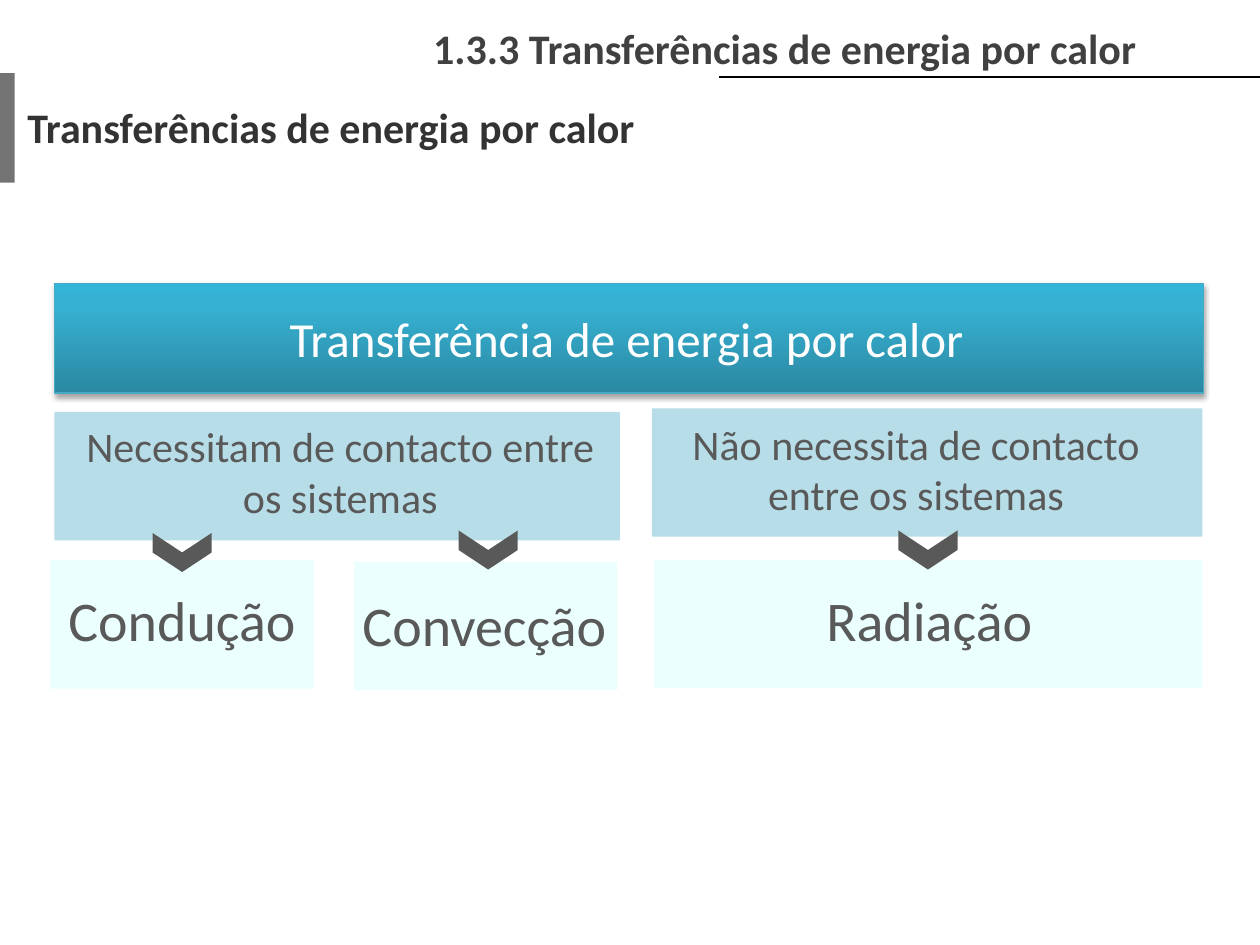
from pptx import Presentation
from pptx.dml.color import RGBColor
from pptx.enum.shapes import MSO_CONNECTOR as Conn, MSO_SHAPE as Kind
from pptx.enum.text import PP_ALIGN as Align
from pptx.oxml import parse_xml as xml
from pptx.oxml.ns import nsdecls, qn
from pptx.util import Pt

BLACK = RGBColor(0, 0, 0)
WHITE = RGBColor(255, 255, 255)
TITLE = RGBColor(0x40, 0x40, 0x40)
HEAD = RGBColor(0x33, 0x33, 0x33)
GRAY = RGBColor(0x59, 0x59, 0x59)
BLUE = RGBColor(0xB7, 0xDE, 0xE8)
PALE = RGBColor(0xEB, 0xFF, 0xFF)
EDGE = RGBColor(0x46, 0xAA, 0xC5)
STOPS = [(0, "2A88A2"), (80, "37B1D2"), (100, "34B4D6")]

BIG = {"size": Pt(32), "color": GRAY}
MID = {"size": Pt(24), "color": GRAY}
BOLD = {"size": Pt(24), "bold": True}

HEADS = [
    (["1.3.3 Transferências de energia por calor"], (240.5, 9.4, 419.8, 36), BOLD | {"color": TITLE}, False),
    (["Transferências de energia por calor"], (8.6, 54.7, 640.8, 40.3), BOLD | {"color": HEAD}, True),
]
BANNER = (["Transferência de energia por calor"], (158.4, 172.8, 436.3, 41), {"size": Pt(28), "color": WHITE})
CARDS = [
    (["Necessitam de contacto entre", "os sistemas"], BLUE, MID, (31, 235.4, 323.3), (23.8, 236.9, 341.3, 65.5)),
    (["Não necessita de contacto entre os sistemas"], BLUE, MID, (372.5, 233.3, 314.6), (381.6, 235.4, 283.7, 65.5)),
    (["Condução"], PALE, BIG, (28.8, 320.1, 150.5), (28.8, 331.2, 150.5, 46)),
    (["Convecção"], PALE, BIG, (202.3, 321, 150.5), (186.5, 334.1, 180.7, 46)),
    (["Radiação"], PALE, BIG, (373.9, 319.9, 313.2), (455.8, 331.2, 150.5, 46)),
]
DEEP = 73.4
ARROWS = [(92.9, 298.8), (267.8, 297.4), (519.1, 297.4)]

deck = Presentation()
deck.slide_width, deck.slide_height = Pt(720), Pt(540)
page = deck.slides.add_slide(deck.slide_layouts[6])


def block(kind, place, color):
    shape = page.shapes.add_shape(kind, *map(Pt, place))
    shape.shadow.inherit = False
    shape.fill.solid()
    shape.fill.fore_color.rgb = color
    shape.line.fill.background()
    return shape


def label(lines, place, style, wrap=True, align=Align.LEFT):
    frame = page.shapes.add_textbox(*map(Pt, place)).text_frame
    frame.word_wrap = wrap
    frame.text = "\n".join(lines)
    for para in frame.paragraphs:
        para.alignment = align
        font = para.runs[0].font
        font.name = "Calibri"
        for key, value in style.items():
            if key == "color":
                font.color.rgb = value
            else:
                setattr(font, key, value)


label(*HEADS[0])
rule = page.shapes.add_connector(Conn.STRAIGHT, Pt(720), Pt(44), Pt(411.1), Pt(44))
rule.line.color.rgb = BLACK
rule.line.width = Pt(0.75)
rule._element.spPr.append(xml(f"<a:effectLst {nsdecls('a')}/>"))

tab = block(Kind.RECTANGLE, (-0.7, 41.8, 9.1, 62.6), BLACK)
tint = tab._element.spPr.find(".//" + qn("a:srgbClr"))
tint.append(xml(f'<a:alpha {nsdecls("a")} val="55000"/>'))
label(*HEADS[1])

bar = block(Kind.RECTANGLE, (31, 162, 656.6, 62.6), EDGE)
bar.line.color.rgb = EDGE
bar.line.width = Pt(0.75)
props = bar._element.spPr
stops = "".join(f'<a:gs pos="{pos * 1000}"><a:srgbClr val="{tone}"/></a:gs>' for pos, tone in STOPS)
props.replace(props.find(qn("a:solidFill")), xml(
    f'<a:gradFill {nsdecls("a")} rotWithShape="1"><a:gsLst>{stops}</a:gsLst>'
    '<a:lin ang="16200000" scaled="0"/></a:gradFill>'))
props.find(qn("a:effectLst")).append(xml(
    f'<a:outerShdw {nsdecls("a")} blurRad="{Pt(3.1)}" dist="{Pt(1.8)}" dir="5400000" rotWithShape="0">'
    '<a:srgbClr val="000000"><a:alpha val="35000"/></a:srgbClr></a:outerShdw>'))
label(*BANNER)

for lines, color, style, (left, top, width), place in CARDS:
    block(Kind.RECTANGLE, (left, top, width, DEEP), color)
    label(lines, place, style, align=Align.CENTER)

for left, top in ARROWS:
    block(Kind.CHEVRON, (left, top, 22.3, 33.8), GRAY).rotation = 90

deck.save("out.pptx")
